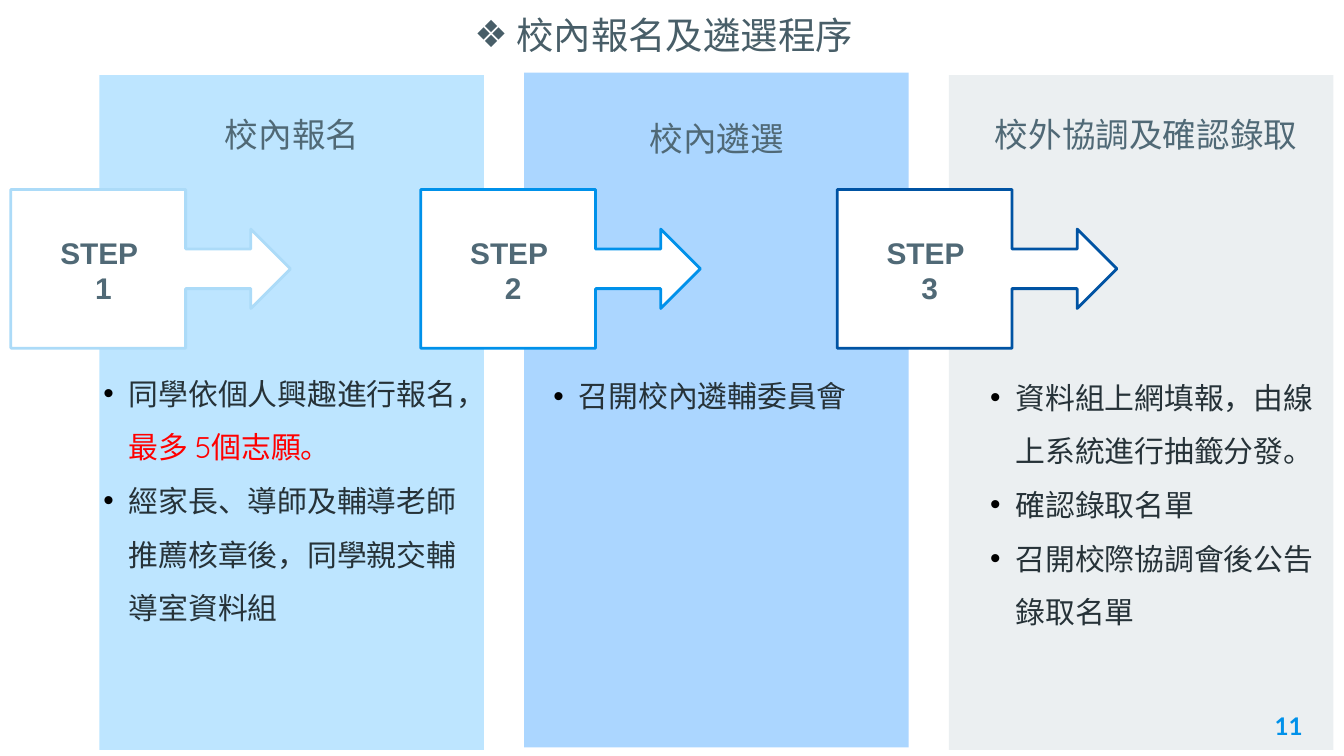
from pptx import Presentation
from pptx.dml.color import RGBColor
from pptx.enum import shapes, text
from pptx.oxml.ns import qn
from pptx.util import Pt
from lxml import etree

CJK = "Noto Sans CJK JP"
RED = "FF0000"
INK = "263238"
LABEL = "506976"

STEPS = [
    {"panel": (53.3, 40.3, 206, 361.5), "fill": ("91D5FF", 60), "line": "ACDBF8",
     "heading": "校內報名", "heading_box": (15, 17.3, 176.4), "callout": (-47.5, 61.2),
     "body_box": (-5, 147.6, 206, 149),
     "body": [[("同學依個人興趣進行報名，", INK), ("最多 5個志願。", RED)],
              [("經家長、導師及輔導老師推薦核章後，同學親交輔導室資料組", INK)]]},
    {"panel": (280.8, 38.9, 206, 361.5), "fill": ("74BBFF", 60), "line": "0091EA",
     "heading": "校內遴選", "heading_box": (15, 20.9, 176.4), "callout": (-55.4, 62.6),
     "body_box": (8.6, 150.5, 197.3, 32.4),
     "body": [[("召開校內遴輔委員會", INK)]]},
    {"panel": (508.3, 40.3, 206, 361.5), "fill": ("9DB2BC", 20), "line": "0053A3",
     "heading": "校外協調及確認錄取", "heading_box": (15, 17.3, 181.4), "callout": (-59.8, 61.2),
     "body_box": (15, 149.8, 191.5, 149),
     "body": [[("資料組上網填報，由線上系統進行抽籤分發。", INK)],
              [("確認錄取名單", INK)],
              [("召開校際協調會後公告錄取名單", INK)]]},
]


def color(value):
    """Turn a hex string into a colour."""
    return RGBColor.from_string(value)


def add_bullet(paragraph, mark, mark_color, indent):
    """Give a paragraph a hanging bullet."""
    properties = paragraph._p.get_or_add_pPr()
    properties.set("marL", str(Pt(indent)))
    properties.set("indent", str(-Pt(indent)))
    holder = etree.SubElement(properties, qn("a:buClr"))
    etree.SubElement(holder, qn("a:srgbClr"), val=mark_color)
    etree.SubElement(properties, qn("a:buFont"), typeface="Arial")
    etree.SubElement(properties, qn("a:buChar"), char=mark)


def style(paragraph, size, name, value, bold=False):
    """Set the font of a whole paragraph."""
    font = paragraph.font
    font.size, font.name, font.bold = Pt(size), name, bold
    font.color.rgb = color(value)
    etree.SubElement(font._element, qn("a:ea"), typeface=CJK)


def add_frame(slide, box):
    """Add a wrapping text box and return its text frame."""
    frame = slide.shapes.add_textbox(*map(Pt, box)).text_frame
    frame.word_wrap = True
    return frame


def add_panel(slide, box, fill, opacity):
    """Add a translucent background panel."""
    panel = slide.shapes.add_shape(shapes.MSO_SHAPE.RECTANGLE, *map(Pt, box))
    panel.shadow.inherit = False
    panel.fill.solid()
    panel.fill.fore_color.rgb = color(fill)
    panel.line.fill.background()
    tint = panel._element.spPr.find(qn("a:solidFill"))[0]
    etree.SubElement(tint, qn("a:alpha"), val=str(opacity * 1000))


def add_callout(slide, left, top, number, line):
    """Add an arrow callout with its step label."""
    callout = slide.shapes.add_shape(
        shapes.MSO_SHAPE.RIGHT_ARROW_CALLOUT, Pt(left), Pt(top), Pt(149.8), Pt(85))
    callout.shadow.inherit = False
    callout.adjustments[3] = 0.625
    callout.fill.solid()
    callout.fill.fore_color.rgb = color("FFFFFF")
    callout.line.color.rgb = color(line)
    callout.line.width = Pt(1.5)
    frame = add_frame(slide, (left + 11.7, top + 20.2, 71.3, 46))
    frame.vertical_anchor = text.MSO_ANCHOR.MIDDLE
    frame.text = f"STEP\n {number}"
    for paragraph in frame.paragraphs:
        paragraph.alignment = text.PP_ALIGN.CENTER
        style(paragraph, 16, "Arial", LABEL, True)


def add_body(slide, box, items):
    """Add the bulleted description of a step."""
    frame = add_frame(slide, box)
    for index, runs in enumerate(items):
        paragraph = frame.add_paragraph() if index else frame.paragraphs[0]
        paragraph.line_spacing = 1.5
        add_bullet(paragraph, "•", "000000", 13.7)
        style(paragraph, 16, "Quicksand", INK)
        for words, value in runs:
            run = paragraph.add_run()
            run.text = words
            if value != INK:
                run.font.color.rgb = color(value)


def add_step(slide, number, step):
    """Add one step, placed relative to its panel."""
    left, top, _, _ = step["panel"]
    add_panel(slide, step["panel"], *step["fill"])
    x, y = step["callout"]
    add_callout(slide, left + x, top + y, number, step["line"])
    x, y, width = step["heading_box"]
    heading = add_frame(slide, (left + x, top + y, width, 29)).paragraphs[0]
    heading.text = step["heading"]
    heading.alignment = text.PP_ALIGN.CENTER
    style(heading, 18, CJK, LABEL)
    x, y, width, height = step["body_box"]
    add_body(slide, (left + x, top + y, width, height), step["body"])


def add_title(slide, box):
    """Add the bulleted slide title."""
    paragraph = add_frame(slide, box).paragraphs[0]
    paragraph.text = "校內報名及遴選程序"
    add_bullet(paragraph, "❖", "485E68", 22.5)
    style(paragraph, 20, CJK, "485E68")


def add_page_number(slide, box):
    """Add the page number."""
    frame = add_frame(slide, box)
    frame.margin_left = frame.margin_right = Pt(7.2)
    frame.margin_top = frame.margin_bottom = Pt(7.2)
    paragraph = frame.paragraphs[0]
    paragraph.text = "11"
    paragraph.alignment = text.PP_ALIGN.RIGHT
    style(paragraph, 13, "Lato", "0091EA", True)


def main():
    """Build and save the slide."""
    presentation = Presentation()
    presentation.slide_width, presentation.slide_height = Pt(720), Pt(405)
    slide = presentation.slides.add_slide(presentation.slide_layouts[6])
    for number, step in enumerate(STEPS, 1):
        add_step(slide, number, step)
    add_title(slide, (247, 2.9, 406, 31.7))
    add_page_number(slide, (661.7, 373.7, 43.2, 31))
    presentation.save("out.pptx")


if __name__ == "__main__":
    main()
